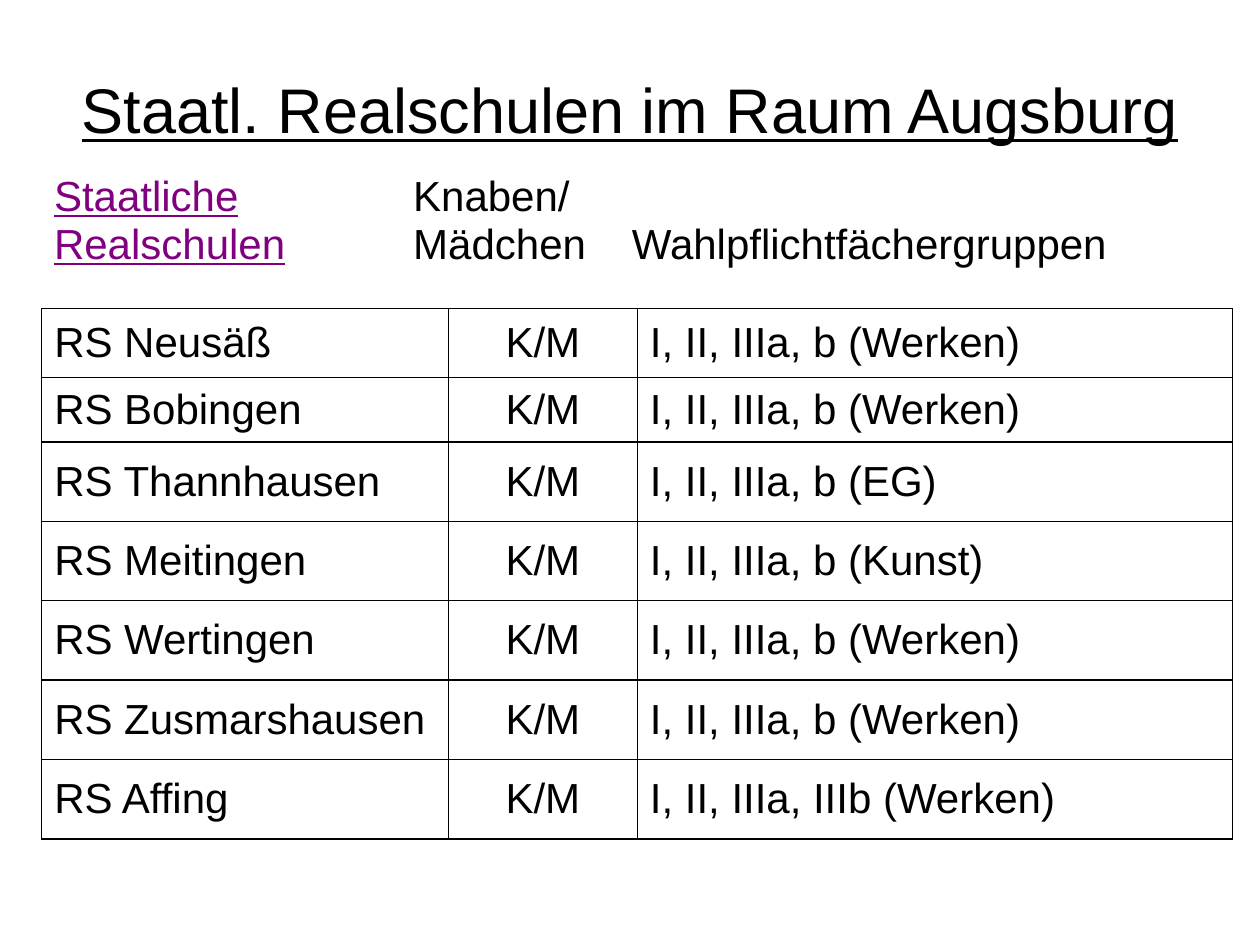
from lxml.etree import SubElement
from pptx import Presentation
from pptx.dml.color import RGBColor
from pptx.enum.text import MSO_ANCHOR, PP_ALIGN
from pptx.oxml.ns import qn
from pptx.util import Cm, Pt

BLACK, PURPLE = "000000", "800080"
GROUPS = "I, II, IIIa, b "
SCHOOLS = [
    ("RS Neusäß", GROUPS + "(Werken)"),
    ("RS Bobingen", GROUPS + "(Werken)"),
    ("RS Thannhausen", GROUPS + "(EG)"),
    ("RS Meitingen", GROUPS + "(Kunst)"),
    ("RS Wertingen", GROUPS + "(Werken)"),
    ("RS Zusmarshausen", GROUPS + "(Werken)"),
    ("RS Affing", "I, II, IIIa, IIIb (Werken)"),
]
COL_WIDTHS = [8.2, 3.81, 9, 3]
ROW_HEIGHTS = [1.39, 1.3] + [1.6] * 5


def rgb(color):
    """Turn a hex string into a colour."""
    return RGBColor.from_string(color)


def add_text(p, text, size=24, color=BLACK, underline=False, align=None):
    """Add a formatted run to a paragraph."""
    if align is not None:
        p.alignment = align
    r = p.add_run()
    r.text = text
    r.font.name = "Arial"
    r.font.size = Pt(size)
    r.font.underline = underline
    r.font.color.rgb = rgb(color)


def add_title(s, text):
    """Place and fill the title placeholder."""
    sp = s.shapes.title
    sp.left, sp.top, sp.width, sp.height = Cm(0), Cm(1.25), Cm(25.4), Cm(1.88)
    tf = sp.text_frame
    tf.vertical_anchor = MSO_ANCHOR.MIDDLE
    add_text(tf.paragraphs[0], text, size=36, underline=True, align=PP_ALIGN.CENTER)


def set_tabs(p, stops):
    """Set left tab stops, given in centimetres."""
    tabs = SubElement(p._p.get_or_add_pPr(), qn("a:tabLst"))
    for stop in stops:
        SubElement(tabs, qn("a:tab"), pos=str(Cm(stop)), algn="l")


def add_headings(s):
    """Add the two-line column headings, aligned by tab stops."""
    tf = s.shapes.add_textbox(Cm(0.84), Cm(3.73), Cm(23.7), Cm(1.85)).text_frame
    tf.word_wrap = True
    lines = [("Staatliche", "\tKnaben/"),
             ("Realschulen", "\tMädchen\tWahlpflichtfächergruppen")]
    for i, (name, rest) in enumerate(lines):
        p = tf.add_paragraph() if i else tf.paragraphs[0]
        p.line_spacing = 0.5
        p.space_before = Pt(13)
        set_tabs(p, [7.24, 11.65])
        add_text(p, name, color=PURPLE, underline=True)
        add_text(p, rest)


def set_borders(cell, hidden):
    """Draw 1 pt black cell edges, leaving out the hidden ones."""
    tcPr = cell._tc.get_or_add_tcPr()
    for side in "LRTB":
        ln = SubElement(tcPr, qn(f"a:ln{side}"), w=str(Pt(1)))
        if side in hidden:
            SubElement(ln, qn("a:noFill"))
        else:
            fill = SubElement(ln, qn("a:solidFill"))
            SubElement(fill, qn("a:srgbClr"), val=BLACK)


def add_school_table(s):
    """Add the table of schools, with an open edge before the last column."""
    table = s.shapes.add_table(
        len(SCHOOLS), len(COL_WIDTHS), Cm(0.84), Cm(6.22),
        Cm(sum(COL_WIDTHS)), Cm(sum(ROW_HEIGHTS))).table
    table.first_row = table.horz_banding = False
    for col, width in zip(table.columns, COL_WIDTHS):
        col.width = Cm(width)
    for row, height, (school, groups) in zip(table.rows, ROW_HEIGHTS, SCHOOLS):
        row.height = Cm(height)
        texts = [school, "K/M", groups, ""]
        for cell, text, hidden in zip(row.cells, texts, ["", "", "R", "L"]):
            set_borders(cell, hidden)
            cell.fill.background()
            cell.vertical_anchor = MSO_ANCHOR.MIDDLE
            if text:
                align = PP_ALIGN.CENTER if text == "K/M" else PP_ALIGN.LEFT
                add_text(cell.text_frame.paragraphs[0], text, align=align)


def main():
    """Build and save the slide."""
    prs = Presentation()
    prs.slide_width, prs.slide_height = Cm(25.4), Cm(19.05)
    s = prs.slides.add_slide(prs.slide_layouts[5])
    add_title(s, "Staatl. Realschulen im Raum Augsburg")
    add_school_table(s)
    add_headings(s)
    prs.save("out.pptx")


if __name__ == "__main__":
    main()
